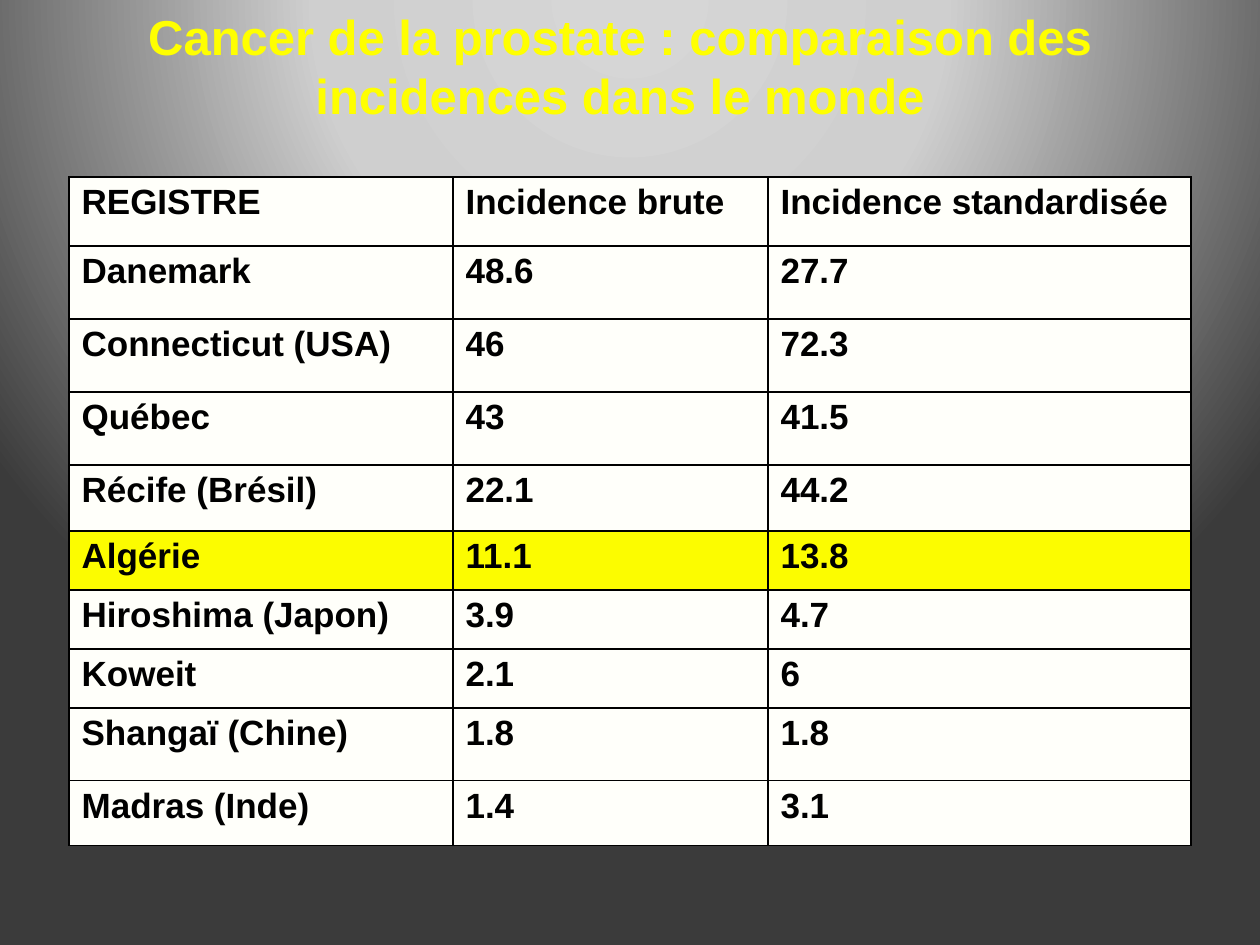
import pptx
import pptx.dml.color
import pptx.enum.text
import pptx.oxml
import pptx.oxml.ns
import pptx.util
from lxml import etree

PX = 914400 / 126
BLACK, IVORY, YELLOW, HIGHLIGHT = "000000", "FFFFFA", "FFFF00", "FCFC00"
qn = pptx.oxml.ns.qn


def color(hex_code):
    return pptx.dml.color.RGBColor.from_string(hex_code)


def write(frame, text, size=20, ink=BLACK, align=pptx.enum.text.PP_ALIGN.LEFT):
    paragraph = frame.paragraphs[0]
    paragraph.alignment = align
    run = paragraph.add_run()
    run.text = text
    run.font.name = "Arial"
    run.font.size = pptx.util.Pt(size)
    run.font.bold = True
    run.font.color.rgb = color(ink)


deck = pptx.Presentation()
deck.slide_width, deck.slide_height = round(1260 * PX), round(945 * PX)
slide = deck.slides.add_slide(deck.slide_layouts[6])

# Background: circular gradient centred above the slide
slide.background.fill.gradient()
gradient = slide.element.find(".//" + qn("a:gradFill"))
for part in list(gradient):
    gradient.remove(part)
stops = etree.SubElement(gradient, qn("a:gsLst"))
for percent, shade in ((0, "D6D6D6"), (40, "CFCFCF"), (100, "3B3B3B")):
    stop = etree.SubElement(stops, qn("a:gs"), pos=str(percent * 1000))
    etree.SubElement(stop, qn("a:srgbClr"), val=shade)
circle = etree.SubElement(gradient, qn("a:path"), path="circle")
etree.SubElement(circle, qn("a:fillToRect"), l="50000", t="-80000", r="50000", b="180000")

# Table of incidences
registries = [
    ("REGISTRE", "Incidence brute", "Incidence standardisée"),
    ("Danemark", "48.6", "27.7"),
    ("Connecticut (USA)", "46", "72.3"),
    ("Québec", "43", "41.5"),
    ("Récife (Brésil)", "22.1", "44.2"),
    ("Algérie", "11.1", "13.8"),
    ("Hiroshima (Japon)", "3.9", "4.7"),
    ("Koweit", "2.1", "6"),
    ("Shangaï (Chine)", "1.8", "1.8"),
    ("Madras (Inde)", "1.4", "3.1"),
]
column_widths = [384, 315, 423]
row_heights = [69, 73, 73, 73, 66, 59, 59, 59, 73, 65]
incidences = slide.shapes.add_table(
    len(registries), len(column_widths), round(69 * PX), round(177 * PX),
    round(sum(column_widths) * PX), round(sum(row_heights) * PX)).table
incidences.first_row = incidences.horz_banding = False
for column, width in zip(incidences.columns, column_widths):
    column.width = round(width * PX)
for row, height in zip(incidences.rows, row_heights):
    row.height = round(height * PX)

for r, registry in enumerate(registries):
    for c, text in enumerate(registry):
        cell = incidences.cell(r, c)
        write(cell.text_frame, text)
        # Outer sides are thinner than the inner rules
        thin_sides = {"lnL": c == 0 and r > 0, "lnR": c == 2}
        for side in ("lnL", "lnR", "lnT", "lnB"):
            weight = pptx.util.Pt(0.75 if thin_sides.get(side) else 1)
            border = etree.SubElement(
                cell._tc.get_or_add_tcPr(), qn("a:" + side), w=str(weight))
            paint = etree.SubElement(border, qn("a:solidFill"))
            etree.SubElement(paint, qn("a:srgbClr"), val=BLACK)
        cell.fill.solid()
        cell.fill.fore_color.rgb = color(HIGHLIGHT if registry[0] == "Algérie" else IVORY)

# Title
title = slide.shapes.add_textbox(
    round(29 * PX), 0, round(1182 * PX), round(131 * PX)).text_frame
title.word_wrap = True
title.auto_size = pptx.enum.text.MSO_AUTO_SIZE.SHAPE_TO_FIT_TEXT
write(title, "Cancer de la prostate : comparaison des incidences dans le monde",
      size=28, ink=YELLOW, align=pptx.enum.text.PP_ALIGN.CENTER)

deck.save("out.pptx")
